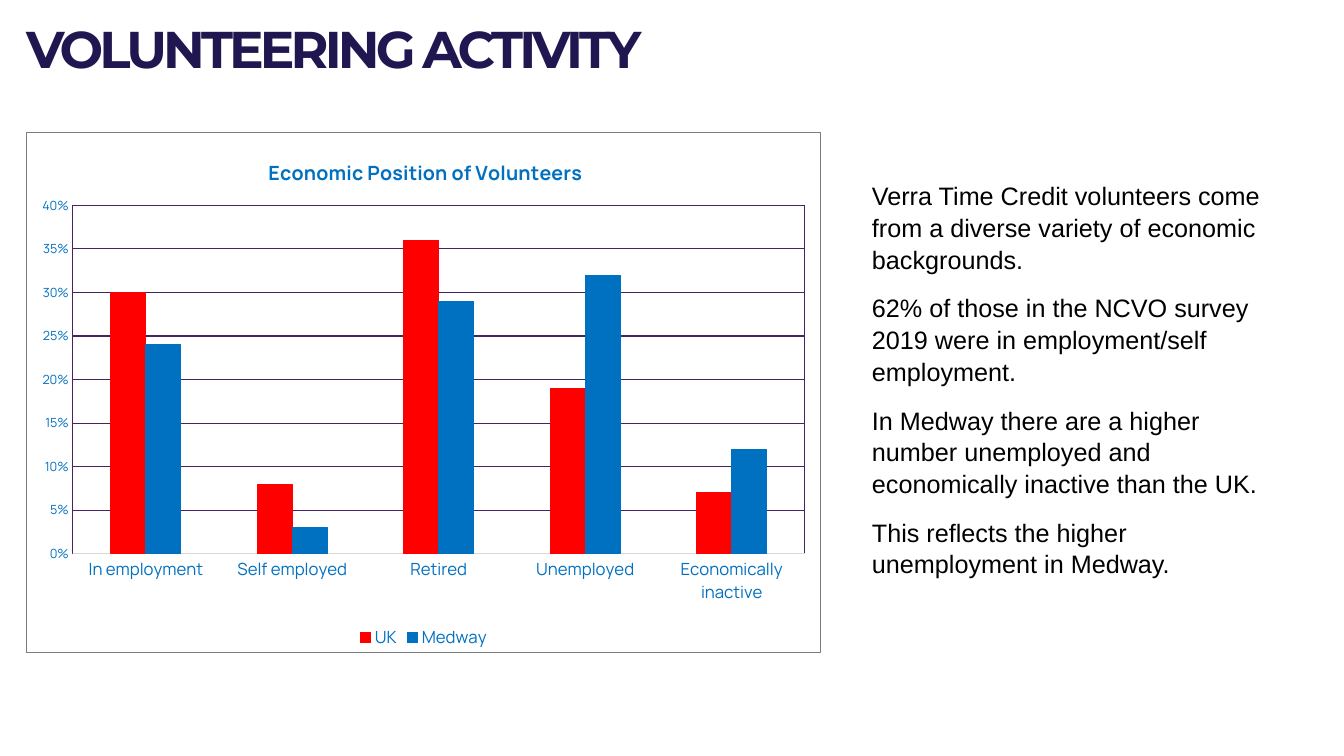
from lxml import etree
from pptx import Presentation, util as u
from pptx.chart.data import CategoryChartData
from pptx.dml.color import RGBColor
from pptx.enum import chart as ch, text
from pptx.oxml import parse_xml
from pptx.oxml.ns import nsdecls, qn

NAVY, BLUE, RED, PURPLE = "201751", "0070C0", "FF0000", "472364"
SILVER, GREY, BLACK = "D9D9D9", "7C7C7C", "000000"

CATEGORIES = ["In employment", "Self employed", "Retired", "Unemployed",
              "Economically inactive"]
SERIES = [("UK", RED, [0.3, 0.08, 0.36, 0.19, 0.07]),
          ("Medway", BLUE, [0.24, 0.03, 0.29, 0.32, 0.12])]
COMMENTARY = [
    "Verra Time Credit volunteers come from a diverse variety of economic backgrounds.",
    "62% of those in the NCVO survey 2019 were in employment/self employment.",
    "In Medway there are a higher number unemployed and economically inactive than the UK.",
    "This reflects the higher unemployment in Medway.",
]


def rgb(value):
    return RGBColor.from_string(value)


def style_font(font, name, size, color, bold=False):
    font.name, font.size, font.bold = name, u.Pt(size), bold
    font.color.rgb = rgb(color)


def style_line(line, color):
    line.color.rgb = rgb(color)
    line.width = u.Pt(0.75)


def place(part, box):
    part.left, part.top, part.width, part.height = map(u.Cm, box)


def outline(color):
    """Chart part properties: no fill and a thin border."""
    return parse_xml(
        f'<c:spPr {nsdecls("c", "a")}><a:noFill/><a:ln w="9525"><a:solidFill>'
        f'<a:srgbClr val="{color}"/></a:solidFill></a:ln></c:spPr>')


def set_layout(element, index, **fractions):
    """Fix a chart part at fractions of the chart's size."""
    for old in element.findall(qn("c:layout")):
        element.remove(old)
    layout = etree.Element(qn("c:layout"))
    manual = etree.SubElement(layout, qn("c:manualLayout"))
    if "w" in fractions:
        etree.SubElement(manual, qn("c:layoutTarget")).set("val", "inner")
    for mode in ("xMode", "yMode"):
        etree.SubElement(manual, qn(f"c:{mode}")).set("val", "edge")
    for key, value in fractions.items():
        etree.SubElement(manual, qn(f"c:{key}")).set("val", str(value))
    element.insert(index, layout)


def add_heading(slide, box):
    heading = slide.shapes.title
    place(heading, box)
    frame = heading.text_frame
    frame.margin_left = frame.margin_right = 0
    frame.margin_top = frame.margin_bottom = 0
    frame.vertical_anchor = text.MSO_ANCHOR.TOP
    frame.auto_size = text.MSO_AUTO_SIZE.NONE
    line = frame.paragraphs[0]
    line.alignment = text.PP_ALIGN.LEFT
    line.line_spacing = u.Pt(32.3)
    run = line.add_run()
    run.text = "VOLUNTEERING ACTIVITY"
    style_font(run.font, "Montserrat", 36.9, NAVY, True)
    run.font._element.set("spc", "-280")


def add_volunteer_chart(slide, box):
    data = CategoryChartData(number_format="0%")
    data.categories = CATEGORIES
    for name, _, values in SERIES:
        data.add_series(name, values)
    chart = slide.shapes.add_chart(
        ch.XL_CHART_TYPE.COLUMN_CLUSTERED, *map(u.Cm, box), data).chart
    style_font(chart.font, "Manrope", 10, BLUE)

    # Columns
    columns = chart.plots[0]
    columns.gap_width, columns.overlap = 219, 0
    columns.vary_by_categories = False
    for series, (_, color, _) in zip(columns.series, SERIES):
        series.format.fill.solid()
        series.format.fill.fore_color.rgb = rgb(color)
        style_line(series.format.line, color)

    # Axes
    positions, shares = chart.category_axis, chart.value_axis
    for axis, size in ((positions, 12), (shares, 9)):
        axis.major_tick_mark = axis.minor_tick_mark = ch.XL_TICK_MARK.NONE
        style_font(axis.tick_labels.font, "Manrope", size, BLUE)
    style_line(positions.format.line, SILVER)
    shares.format.line.fill.background()
    shares.minimum_scale, shares.maximum_scale, shares.major_unit = 0, 0.4, 0.05
    shares.tick_labels.number_format = "0%"
    shares.tick_labels.number_format_is_linked = False
    style_line(shares.major_gridlines.format.line, PURPLE)

    # Chart title and legend
    run = chart.chart_title.text_frame.paragraphs[0].add_run()
    run.text = "Economic Position of Volunteers"
    style_font(run.font, "Manrope", 14, BLUE, True)
    chart.has_legend = True
    chart.legend.position = ch.XL_LEGEND_POSITION.BOTTOM
    chart.legend.include_in_layout = False
    style_font(chart.legend.font, "Manrope", 12, BLUE)

    # Borders and plot position
    space = chart._chartSpace
    plot_area = space.find(".//" + qn("c:plotArea"))
    plot_area.append(outline(PURPLE))
    space.find(qn("c:txPr")).addprevious(outline(GREY))
    set_layout(plot_area, 0, x=0.058, y=0.14, w=0.922, h=0.67)
    set_layout(chart.chart_title._element, 1, x=0.3, y=0.04)


def add_commentary(slide, box):
    commentary = slide.placeholders[1]
    place(commentary, box)
    frame = commentary.text_frame
    frame.word_wrap = True
    frame.auto_size = text.MSO_AUTO_SIZE.SHAPE_TO_FIT_TEXT
    frame.vertical_anchor = text.MSO_ANCHOR.TOP
    for i, sentence in enumerate(COMMENTARY):
        paragraph = frame.add_paragraph() if i else frame.paragraphs[0]
        properties = paragraph._p.get_or_add_pPr()
        properties.set("marL", "0")
        properties.set("indent", "0")
        etree.SubElement(properties, qn("a:buNone"))
        paragraph.space_before, paragraph.space_after = u.Pt(0), u.Pt(12)
        paragraph.line_spacing = 1.05
        run = paragraph.add_run()
        run.text = sentence
        style_font(run.font, "Arial", 18, BLACK)


def main():
    deck = Presentation()
    deck.slide_width, deck.slide_height = u.Cm(33.87), u.Cm(19.05)
    slide = deck.slides.add_slide(deck.slide_layouts[1])
    add_heading(slide, (0.66, 0.84, 23.16, 2.51))
    add_volunteer_chart(slide, (0.66, 3.33, 20.04, 13.13))
    add_commentary(slide, (21.72, 4.39, 11.02, 10.01))
    deck.save("out.pptx")


if __name__ == "__main__":
    main()
